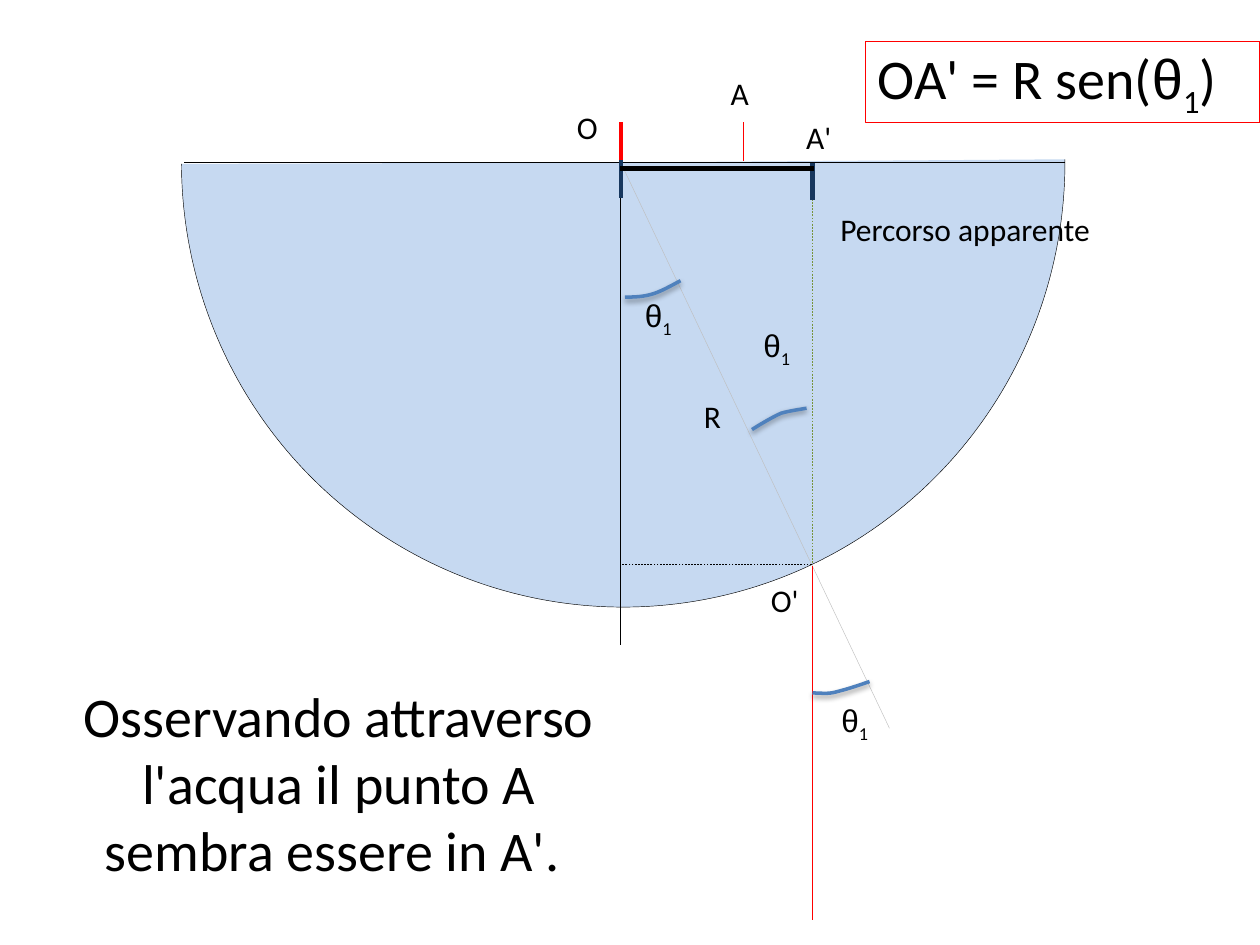
from lxml import etree
from pptx import Presentation
from pptx.dml.color import RGBColor as Rgb
from pptx.enum.dml import MSO_LINE as Dash
from pptx.enum.shapes import MSO_CONNECTOR as Conn, MSO_SHAPE as Shape
from pptx.enum.text import MSO_AUTO_SIZE as Auto, PP_ALIGN as Align
from pptx.oxml import parse_xml
from pptx.oxml.ns import qn
from pptx.util import Cm, Pt

HUES = {
    "black": "000000", "water": "C6D9F1", "red": "FF0000", "grey": "BFBFBF",
    "green": "77933C", "navy": "17375E", "blue": "4F81BD",
}
SHADE = (
    '<a:effectLst xmlns:a="http://schemas.openxmlformats.org/drawingml/2006/main">'
    '<a:outerShdw blurRad="40000" dist="20000" dir="5400000" rotWithShape="0">'
    '<a:srgbClr val="000000"><a:alpha val="38000"/></a:srgbClr>'
    '</a:outerShdw></a:effectLst>'
)
THETA = [("θ", "Arial", False), ("1", "Calibri", True)]


def stroke(line, hue, width):
    line.color.rgb = Rgb.from_string(HUES[hue])
    line.width = Pt(width)


def write(shape, parts, size, wrap=True, align=Align.LEFT):
    """Fill a shape with runs given as (text, font, subscript)."""
    frame = shape.text_frame
    frame.word_wrap = wrap
    frame.auto_size = Auto.SHAPE_TO_FIT_TEXT
    para = frame.paragraphs[0]
    para.alignment = align
    for text, face, sub in parts:
        run = para.add_run()
        run.text = text
        run.font.name = face
        run.font.size = Pt(size)
        run.font.color.rgb = Rgb.from_string(HUES["black"])
        if sub:
            run.font._element.set("baseline", "-25000")


deck = Presentation()
deck.slide_width, deck.slide_height = Cm(25.4), Cm(19.05)
slide = deck.slides.add_slide(deck.slide_layouts[6])
shapes = slide.shapes

# Half disc of water
bowl = shapes.add_shape(Shape.ARC, Cm(3.66), Cm(-5.69), Cm(17.81), Cm(17.93))
bowl.adjustments[0], bowl.adjustments[1] = 215.76, 107.876
bowl.shadow.inherit = False
bowl.fill.solid()
bowl.fill.fore_color.rgb = Rgb.from_string(HUES["water"])
stroke(bowl.line, "black", 0.25)

# Surface, axes, rays and marks: x1, y1, x2, y2, colour, width, dashed
lines = [
    (21.46, 3.28, 3.71, 3.28, "black", 0.25, False),
    (12.5, 2.84, 12.5, 13, "black", 0.25, False),
    (12.5, 3.25, 17.93, 14.68, "grey", 0.25, False),
    (16.38, 11.4, 16.38, 18.54, "red", 0.25, False),
    (16.36, 11.38, 12.5, 11.38, "black", 0.25, True),
    (16.38, 3.63, 16.38, 11.35, "green", 0.25, True),
    (12.52, 2.46, 12.52, 3.25, "red", 2.25, False),
    (14.99, 2.46, 14.99, 3.25, "red", 0.25, False),
    (12.52, 3.23, 12.52, 3.99, "navy", 2.25, False),
    (16.38, 3.28, 16.38, 4.04, "navy", 3, False),
    (12.5, 3.4, 16.41, 3.4, "black", 3, False),
]
for x1, y1, x2, y2, hue, width, dashed in lines:
    line = shapes.add_connector(Conn.STRAIGHT, Cm(x1), Cm(y1), Cm(x2), Cm(y2))
    stroke(line.line, hue, width)
    if dashed:
        line.line.dash_style = Dash.DASH
    etree.SubElement(line._element.spPr, qn("a:effectLst"))

# Angle marks: two joined cubic curves each
marks = [
    [(16.38, 13.97), (16.54, 13.97), (16.71, 14), (16.89, 13.94),
     (17.09, 13.89), (17.3, 13.82), (17.53, 13.74)],
    [(16.26, 8.23), (16.1, 8.26), (15.93, 8.28), (15.75, 8.33),
     (15.57, 8.41), (15.37, 8.53), (15.16, 8.66)],
    [(12.6, 5.99), (12.75, 5.99), (12.93, 5.99), (13.11, 5.94),
     (13.31, 5.89), (13.51, 5.77), (13.72, 5.66)],
]
STEPS = 8
for mark in marks:
    dots = []
    for first in (0, 3):
        for step in range(1, STEPS + 1):
            t = step / STEPS
            rates = ((1 - t) ** 3, 3 * t * (1 - t) ** 2, 3 * t * t * (1 - t), t ** 3)
            bend = mark[first:first + 4]
            dots.append([Cm(sum(r * p[axis] for r, p in zip(rates, bend)))
                         for axis in (0, 1)])
    pen = shapes.build_freeform(Cm(mark[0][0]), Cm(mark[0][1]))
    pen.add_line_segments(dots, close=False)
    curve = pen.convert_to_shape()
    curve.fill.background()
    stroke(curve.line, "blue", 2)
    curve._element.spPr.append(parse_xml(SHADE))

# Angle names
for x, y in [(16.71, 14), (15.14, 6.45), (12.75, 5.84)]:
    box = shapes.add_textbox(Cm(x), Cm(y), Cm(1.07), Cm(1.02))
    write(box, THETA, 18, wrap=False)

# Point names and captions
names = [
    ("O", 11.38, 2.06, 1.24), ("O'", 15.29, 11.58, 1.24),
    ("A", 14.48, 1.37, 1.24), ("A'", 16, 2.26, 1.24),
    ("R", 13.94, 7.87, 1.09), ("Percorso apparente", 16.69, 4.11, 5.84),
]
for text, x, y, width in names:
    box = shapes.add_textbox(Cm(x), Cm(y), Cm(width), Cm(1.02))
    write(box, [(text, "Calibri", False)], 18)

# Formula
rule = shapes.add_shape(Shape.RECTANGLE, Cm(17.45), Cm(0.84), Cm(7.95), Cm(1.63))
rule.shadow.inherit = False
rule.fill.background()
stroke(rule.line, "red", 0.75)
write(rule, [("OA' = R sen(", "Calibri", False), *THETA, (")", "Calibri", False)], 32)

# Conclusion
note = shapes.add_textbox(Cm(1.04), Cm(13.61), Cm(11.58), Cm(4.37))
write(note, [("Osservando attraverso l'acqua il punto A sembra essere in A'. ",
              "Calibri", False)], 32, align=Align.CENTER)

deck.save("out.pptx")
